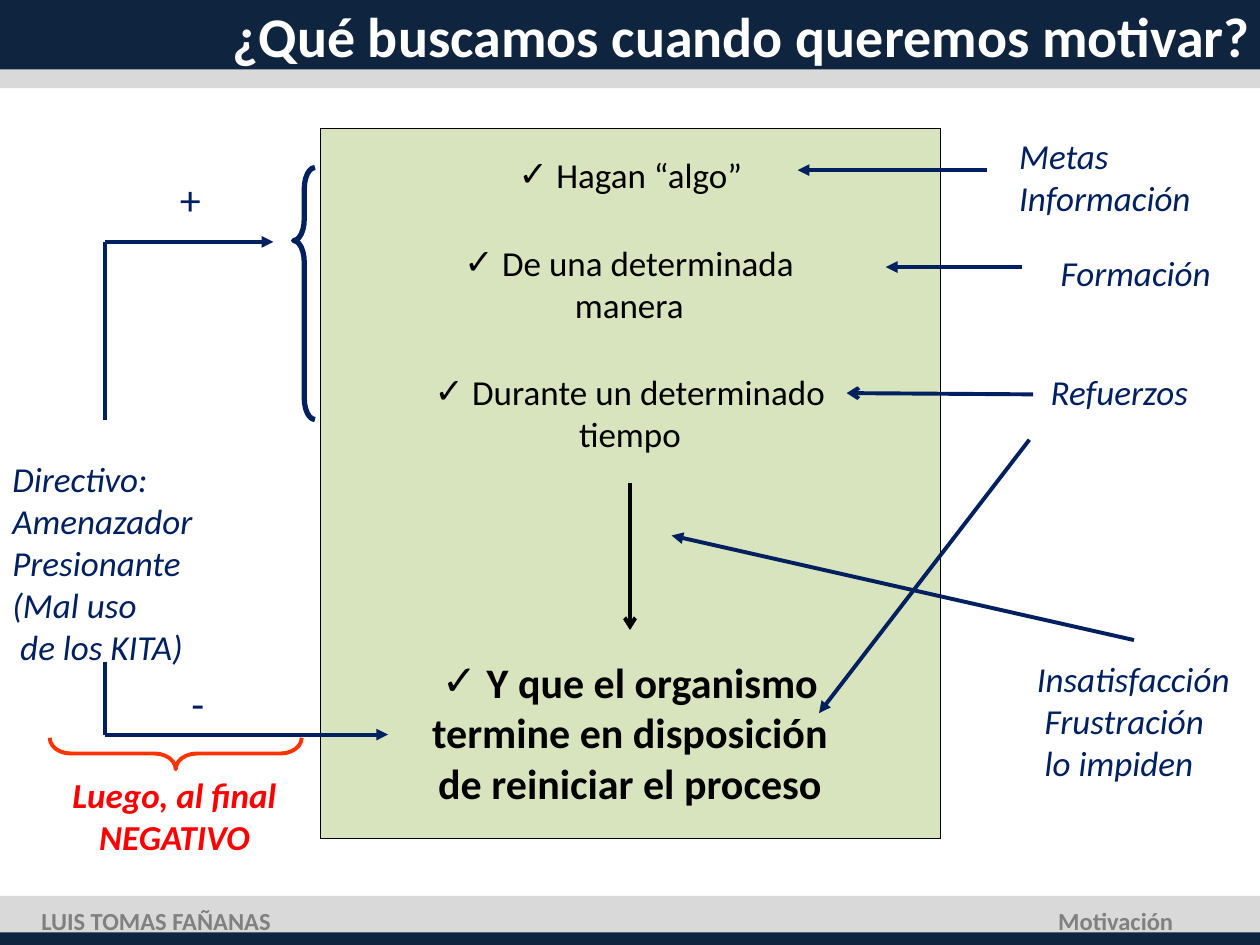
from dataclasses import dataclass

from pptx import Presentation
from pptx.dml.color import RGBColor
from pptx.enum.shapes import MSO_CONNECTOR, MSO_SHAPE
from pptx.enum.text import MSO_ANCHOR, MSO_AUTO_SIZE, PP_ALIGN
from pptx.oxml.ns import qn
from pptx.util import Inches, Pt


@dataclass(frozen=True)
class Theme:
    font: str = "Calibri"
    dark: str = "0F243E"
    band: str = "D9D9D9"
    panel: str = "D7E4BD"
    navy: str = "002060"
    black: str = "000000"
    white: str = "FFFFFF"
    red: str = "FF0000"
    brace_red: str = "FF3300"
    grey: str = "808080"
    title: int = 32
    large: int = 24
    body: int = 20
    footer: int = 14
    line: float = 2.25


THEME = Theme()


def rgb(color):
    return RGBColor.from_string(color)


def add_rect(s, left, top, width, height, fill, outline=None):
    sp = s.shapes.add_shape(MSO_SHAPE.RECTANGLE, Inches(left), Inches(top),
                            Inches(width), Inches(height))
    sp.shadow.inherit = False
    sp.fill.solid()
    sp.fill.fore_color.rgb = rgb(fill)
    if outline:
        sp.line.color.rgb = rgb(outline)
        sp.line.width = Pt(0.25)
    else:
        sp.line.fill.background()


def add_brace(s, left, top, width, height, color, weight, adjustments, rotation=0):
    sp = s.shapes.add_shape(MSO_SHAPE.LEFT_BRACE, Inches(left), Inches(top),
                            Inches(width), Inches(height))
    sp.shadow.inherit = False
    sp.fill.background()
    sp.line.color.rgb = rgb(color)
    sp.line.width = Pt(weight)
    for i, value in enumerate(adjustments):
        sp.adjustments[i] = value
    sp.rotation = rotation


def add_line(s, start, end, head=None, color=THEME.navy):
    """Draw a straight line, with an arrowhead of the given type at its end."""
    line = s.shapes.add_connector(MSO_CONNECTOR.STRAIGHT,
                                  *(Inches(v) for v in (*start, *end)))
    line.line.color.rgb = rgb(color)
    line.line.width = Pt(THEME.line)
    spPr = line.element.spPr
    if head:
        ln = spPr.find(qn("a:ln"))
        ln.append(ln.makeelement(qn("a:tailEnd"), {"type": head}))
    spPr.append(spPr.makeelement(qn("a:effectLst"), {}))


def format_text(tf, size, color, bold=False, italic=False, align=PP_ALIGN.LEFT):
    for p in tf.paragraphs:
        p.alignment = align
        for r in p.runs:
            r.font.name = THEME.font
            r.font.size = Pt(size)
            r.font.color.rgb = rgb(color)
            r.font.bold = bold
            r.font.italic = italic


def add_text(s, left, top, width, height, text, size=THEME.body, color=THEME.navy,
             wrap=False, anchor=MSO_ANCHOR.TOP, **style):
    sp = s.shapes.add_textbox(Inches(left), Inches(top), Inches(width), Inches(height))
    tf = sp.text_frame
    tf.text = text
    tf.word_wrap = wrap
    tf.auto_size = MSO_AUTO_SIZE.SHAPE_TO_FIT_TEXT
    tf.vertical_anchor = anchor
    format_text(tf, size, color, **style)
    return tf


def add_check(s, left, top, width, height, text, wrap=True, **style):
    """Add a centred goal with a check mark as its bullet."""
    tf = add_text(s, left, top, width, height, text, color=THEME.black,
                  wrap=wrap, align=PP_ALIGN.CENTER, **style)
    pPr = tf.paragraphs[0]._p.get_or_add_pPr()
    pPr.append(pPr.makeelement(qn("a:buFont"), {"typeface": THEME.font}))
    pPr.append(pPr.makeelement(qn("a:buChar"), {"char": "✓"}))


def add_bands(s):
    for top, height, color in ((7.11, 0.34, THEME.band), (7.4, 0.1, THEME.dark),
                               (0, 0.7, THEME.band), (0, 0.55, THEME.dark)):
        add_rect(s, 0, top, 10, height, color)


def add_title(s, text):
    title = s.shapes.title
    title.left, title.top = Inches(1.77), Inches(0)
    title.width, title.height = Inches(8.39), Inches(0.56)
    tf = title.text_frame
    tf.text = text
    tf.auto_size = MSO_AUTO_SIZE.NONE
    tf.vertical_anchor = MSO_ANCHOR.MIDDLE
    tf.margin_left, tf.margin_right = Inches(0), Inches(0.23)
    format_text(tf, THEME.title, THEME.white, bold=True, align=PP_ALIGN.RIGHT)
    title.element.getparent().append(title.element)  # in front of the bands


def add_influences(s):
    """Add the factors on the right and their arrows into the panel."""
    for box, text in (
        ((8.13, 5.17, 1.75, 1.11), "Insatisfacción\n Frustración\n lo impiden"),
        ((7.99, 1.02, 1.61, 0.77), "Metas\nInformación"),
        ((8.32, 1.95, 1.42, 0.44), "Formación"),
        ((8.24, 2.89, 1.3, 0.44), "Refuerzos"),
    ):
        add_text(s, *box, text, italic=True)
    for start, end, head in (
        ((9, 5.08), (5.33, 4.25), "triangle"),
        ((7.83, 1.35), (6.33, 1.35), "triangle"),
        ((8.11, 2.12), (7.03, 2.12), "triangle"),
        ((8.17, 3.49), (6.5, 5.66), "triangle"),
        ((8.2, 3.13), (6.72, 3.12), "arrow"),
    ):
        add_line(s, start, end, head)


def add_manager(s):
    """Add the manager on the left with the positive and negative effects."""
    add_text(s, 0, 3.58, 1.64, 1.78,
             "Directivo:\nAmenazador\nPresionante\n(Mal uso\n de los KITA)", italic=True)
    x = 0.83
    for start_y, turn_y, end_x in ((5.25, 5.83, 3.08), (3.33, 1.92, 2.17)):
        add_line(s, (x, start_y), (x, turn_y))
        add_line(s, (x, turn_y), (end_x, turn_y), "triangle")
    add_text(s, 1.42, 5.33, 0.31, 0.5, "-", THEME.large)
    add_text(s, 1.33, 1.33, 0.37, 0.51, "+", THEME.large)
    add_brace(s, 2.33, 1.33, 0.17, 2, THEME.navy, 3, (1, 0.29))
    add_brace(s, 1.27, 4.98, 0.25, 2, THEME.brace_red, THEME.line, (0.67, 0.5), 270)
    add_text(s, 0.47, 6.09, 1.83, 0.77, "Luego, al final\nNEGATIVO", color=THEME.red,
             bold=True, italic=True, align=PP_ALIGN.CENTER)


def add_goals(s):
    add_check(s, 4, 1.17, 2.01, 0.44, " Hagan “algo”", wrap=False)
    add_check(s, 3.2, 1.87, 3.59, 0.77, " De una determinada manera")
    add_check(s, 3.15, 2.89, 3.7, 0.77, " Durante un determinado tiempo")
    add_line(s, (5, 3.83), (5, 5), "arrow", THEME.black)
    add_check(s, 3.21, 5.16, 3.58, 1.31,
              " Y que el organismo termine en disposición de reiniciar el proceso",
              size=THEME.large, bold=True)


def add_footer(s):
    for left, width, text, align in (
        (0.23, 2.04, "LUIS TOMAS FAÑANAS", PP_ALIGN.LEFT),
        (8.29, 1.12, "Motivación", PP_ALIGN.RIGHT),
    ):
        add_text(s, left, 7.14, width, 0.34, text, THEME.footer, THEME.grey,
                 anchor=MSO_ANCHOR.MIDDLE, bold=True, align=align)


def main():
    prs = Presentation()
    prs.slide_width, prs.slide_height = Inches(10), Inches(7.5)
    s = prs.slides.add_slide(prs.slide_layouts[5])
    add_bands(s)
    add_title(s, "¿Qué buscamos cuando queremos motivar?")
    add_rect(s, 2.54, 1.02, 4.92, 5.63, THEME.panel, THEME.black)
    add_influences(s)
    add_manager(s)
    add_goals(s)
    add_footer(s)
    prs.save("out.pptx")


if __name__ == "__main__":
    main()
